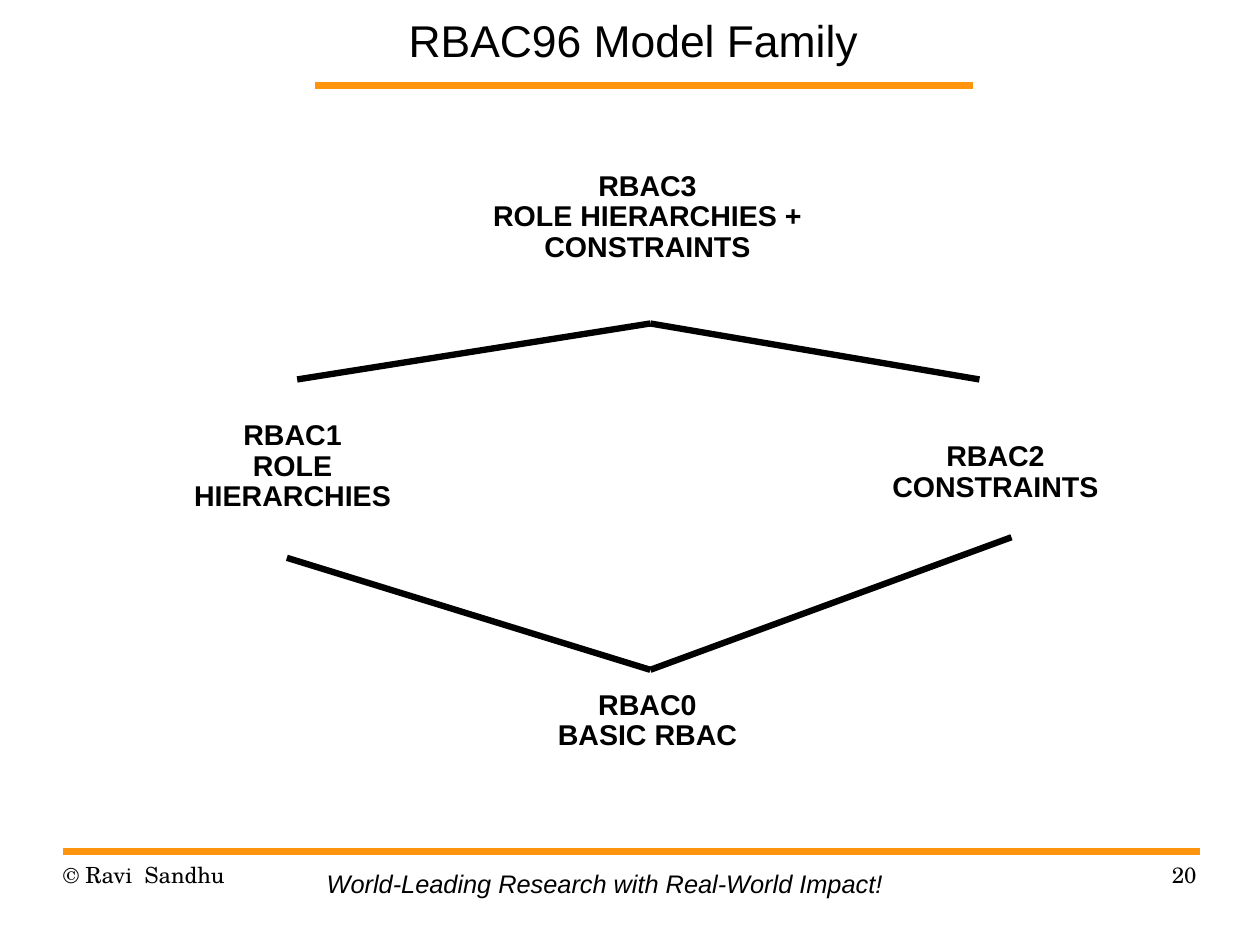
"""Build the RBAC96 model family slide."""
from typing import NamedTuple

from lxml.etree import SubElement
from pptx import Presentation
from pptx.dml.color import RGBColor
from pptx.enum.shapes import MSO_CONNECTOR as CONN
from pptx.enum.text import MSO_ANCHOR as ANCHOR, MSO_AUTO_SIZE as AUTO, PP_ALIGN as ALIGN
from pptx.oxml.ns import qn
from pptx.slide import Slide
from pptx.util import Pt

COLORS = {"text": "000000", "rule": "FF950E"}
SANS, SERIF = "Arial", "TeX Gyre Schola"


class Label(NamedTuple):
    text: str
    left: float
    top: float
    width: float
    height: float
    size: float = 18
    font: str = SANS
    bold: bool = False
    italic: bool = False
    align: ALIGN = ALIGN.CENTER
    anchor: ANCHOR = ANCHOR.TOP
    spacing: float = 1.0
    inset: tuple[float, float] = (7.6, 3.6)
    grow: bool = False


class Line(NamedTuple):
    start: tuple[float, float]
    end: tuple[float, float]
    color: str = "text"
    width: float = 4


def model(text: str, left: float, top: float, width: float, height: float) -> Label:
    return Label(text, left, top, width, height, bold=True, spacing=0.9, grow=True)


def footer(text: str, left: float, align: ALIGN) -> Label:
    return Label(text, left, 542.16, 185.04, 41.04, 14, SERIF, align=align,
                 spacing=1.01, inset=(0, 0))


def rule(left: float, right: float, y: float) -> Line:
    return Line((left, y), (right, y), "rule", 4.31)


TOP, BOTTOM = (409.68, 203.76), (409.68, 421.92)
LINES = [
    rule(198.72, 612.72, 54),
    rule(39.4, 755.8, 536.1),
    Line(TOP, (187.2, 239.04)),
    Line(TOP, (617.04, 239.04)),
    Line(BOTTOM, (180.72, 351.36)),
    Line(BOTTOM, (637.2, 338.4)),
]
LABELS = [
    Label("RBAC96 Model Family", 220.32, 0, 357.12, 45.36, 28, anchor=ANCHOR.BOTTOM),
    footer("© Ravi  Sandhu", 39.6, ALIGN.LEFT),
    footer("20", 568.8, ALIGN.RIGHT),
    Label("World-Leading Research with Real-World Impact!", 198.72, 543.6, 372.96, 26.64, 16,
          italic=True, align=ALIGN.LEFT, inset=(7.2, 3.6), grow=True),
    model("RBAC0\nBASIC RBAC", 342.72, 431.28, 130.32, 46.8),
    model("RBAC3\nROLE HIERARCHIES +\nCONSTRAINTS", 301.68, 104.4, 212.4, 66.96),
    model("RBAC1\nROLE\nHIERARCHIES", 113.76, 261.36, 141.12, 66.96),
    model("RBAC2\nCONSTRAINTS", 553.68, 275.04, 146.88, 46.8),
]


def draw_line(slide: Slide, line: Line) -> None:
    ends = (Pt(v) for v in line.start + line.end)
    sp = slide.shapes.add_connector(CONN.STRAIGHT, *ends)
    sp.line.color.rgb = RGBColor.from_string(COLORS[line.color])
    sp.line.width = Pt(line.width)
    SubElement(sp._element.spPr, qn("a:effectLst"))


def draw_label(slide: Slide, label: Label) -> None:
    box = (Pt(v) for v in (label.left, label.top, label.width, label.height))
    tf = slide.shapes.add_textbox(*box).text_frame
    tf.text = label.text
    tf.word_wrap = not label.grow
    tf.auto_size = AUTO.SHAPE_TO_FIT_TEXT if label.grow else AUTO.NONE
    tf.vertical_anchor = label.anchor
    tf.margin_left = tf.margin_right = Pt(label.inset[0])
    tf.margin_top = tf.margin_bottom = Pt(label.inset[1])
    for p in tf.paragraphs:
        p.alignment = label.align
        p.line_spacing = label.spacing
        for r in p.runs:
            r.font.name = label.font
            r.font.size = Pt(label.size)
            r.font.bold = label.bold
            r.font.italic = label.italic
            r.font.color.rgb = RGBColor.from_string(COLORS["text"])


def main() -> None:
    prs = Presentation()
    prs.slide_width, prs.slide_height = Pt(793.75), Pt(595.25)
    slide = prs.slides.add_slide(prs.slide_layouts[6])
    for line in LINES:
        draw_line(slide, line)
    for label in LABELS:
        draw_label(slide, label)
    prs.save("out.pptx")


if __name__ == "__main__":
    main()
